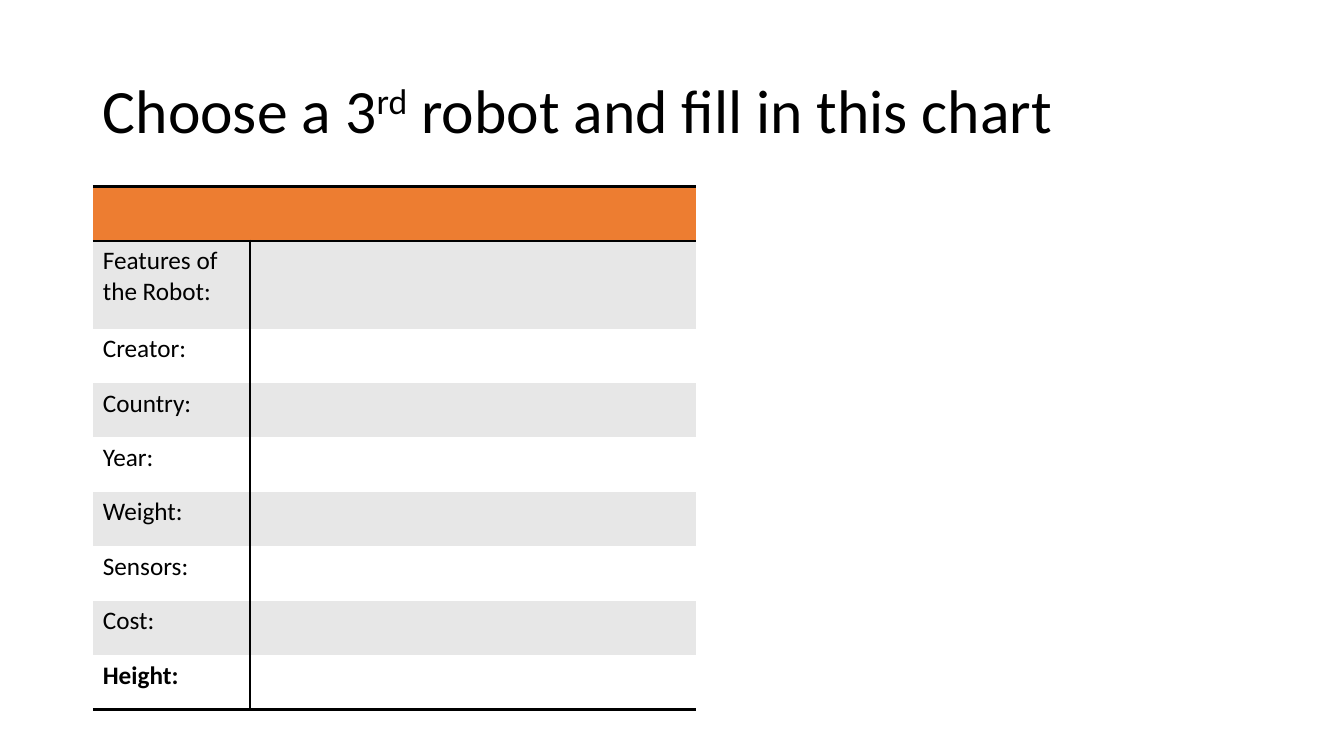
from lxml import etree
from pptx import Presentation
from pptx.dml.color import RGBColor
from pptx.enum.text import MSO_ANCHOR, PP_ALIGN
from pptx.oxml.ns import qn
from pptx.util import Inches, Pt

MIDDLE = MSO_ANCHOR.MIDDLE
LEFT = PP_ALIGN.LEFT

BLACK = RGBColor(0x00, 0x00, 0x00)
WHITE = RGBColor(0xFF, 0xFF, 0xFF)
ORANGE = RGBColor(0xED, 0x7D, 0x31)
GRAY = RGBColor(0xE7, 0xE7, 0xE7)
FONT = "Calibri"

TITLE_RUNS = [("Choose a 3", False), ("rd", True),
              (" robot and fill in this chart", False)]
FEATURES = ["Features of the Robot:", "Creator:", "Country:", "Year:",
            "Weight:", "Sensors:", "Cost:", "Height:"]
COLUMN_WIDTHS = [1.56, 4.42]
ROW_HEIGHT, TALL_ROW_HEIGHT = 0.54, 0.87


def add_run(paragraph, text, size, bold=False):
    run = paragraph.add_run()
    run.text = text
    run.font.name = FONT
    run.font.size = Pt(size)
    run.font.bold = bold
    run.font.color.rgb = BLACK
    return run


def set_borders(cell, widths):
    """Draw the sides named in widths (points); clear the other sides."""
    properties = cell._tc.get_or_add_tcPr()
    for side in "LRTB":
        line = etree.SubElement(properties, qn(f"a:ln{side}"))
        if side in widths:
            line.set("w", str(Pt(widths[side])))
            fill = etree.SubElement(line, qn("a:solidFill"))
            etree.SubElement(fill, qn("a:srgbClr"), val=str(BLACK))
        else:
            etree.SubElement(line, qn("a:noFill"))


def fill_title(title, left, top, width, height):
    title.left, title.top = Inches(left), Inches(top)
    title.width, title.height = Inches(width), Inches(height)
    title.text_frame.vertical_anchor = MIDDLE
    paragraph = title.text_frame.paragraphs[0]
    paragraph.alignment = LEFT
    paragraph.line_spacing = 0.9
    for text, raised in TITLE_RUNS:
        run = add_run(paragraph, text, 44)
        if raised:
            run._r.get_or_add_rPr().set("baseline", "30000")


def add_robot_table(slide, left, top, width, height):
    labels = [""] + FEATURES
    last = len(labels) - 1
    table = slide.shapes.add_table(
        len(labels), len(COLUMN_WIDTHS), Inches(left), Inches(top),
        Inches(width), Inches(height)).table
    table.first_row = table.horz_banding = False
    for column, column_width in zip(table.columns, COLUMN_WIDTHS):
        column.width = Inches(column_width)

    for index, label in enumerate(labels):
        table.rows[index].height = Inches(
            TALL_ROW_HEIGHT if index == 1 else ROW_HEIGHT)

        # Heavy rules around the header and under the last row
        rules = {}
        if index <= 1:
            rules["T"] = 2
        if index in (0, last):
            rules["B"] = 2

        # Thin divider between labels and answers, banded fills
        for position, divider in enumerate("RL"):
            cell = table.cell(index, position)
            set_borders(cell, {**rules, divider: 1} if index else rules)
            cell.fill.solid()
            cell.fill.fore_color.rgb = (
                ORANGE if index == 0 else GRAY if index % 2 else WHITE)

        if label:
            add_run(table.cell(index, 0).text_frame.paragraphs[0], label, 18,
                    bold=index == last)


def main():
    deck = Presentation()
    deck.slide_width, deck.slide_height = Inches(13.33), Inches(7.5)
    slide = deck.slides.add_slide(deck.slide_layouts[5])
    fill_title(slide.shapes.title, 0.92, 0.4, 11.5, 1.45)
    add_robot_table(slide, 0.92, 1.85, 5.98, 5.16)
    deck.save("out.pptx")


if __name__ == "__main__":
    main()
